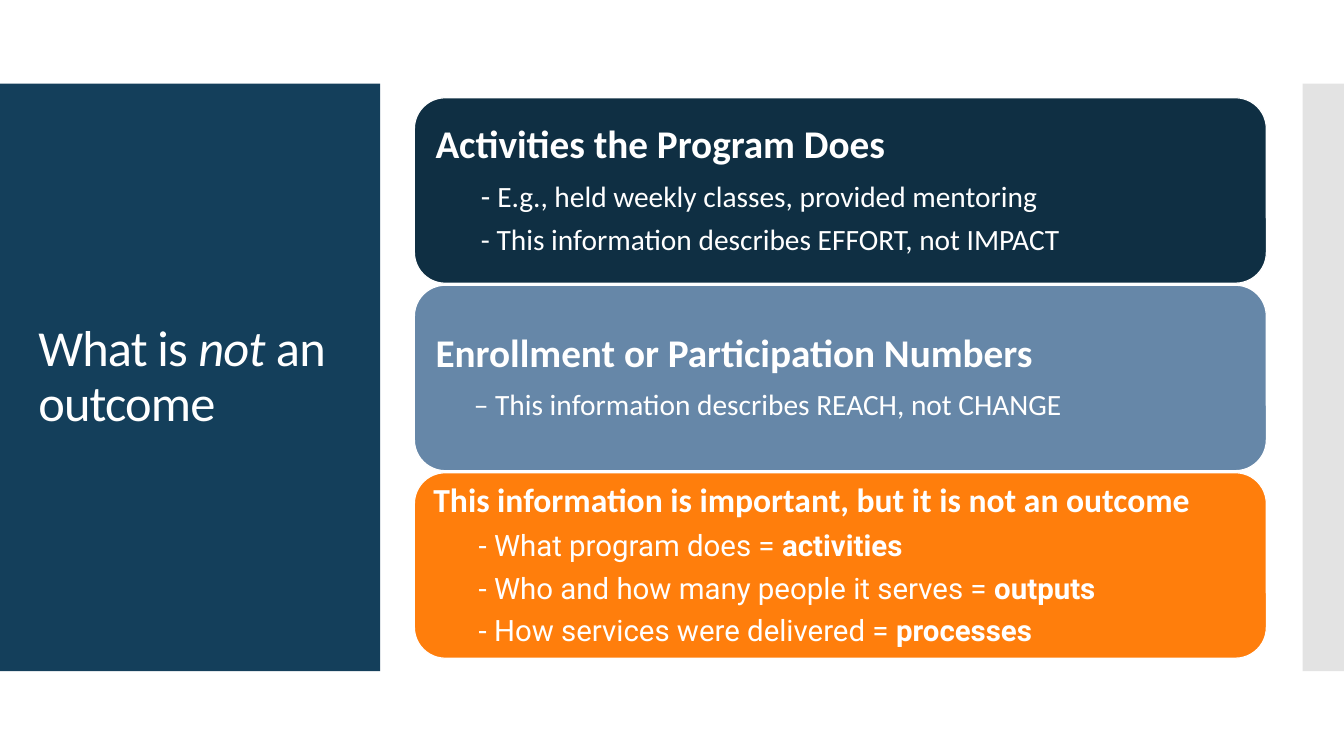
from dataclasses import dataclass

from lxml import etree
from pptx import Presentation
from pptx.dml.color import RGBColor
from pptx.enum.shapes import MSO_SHAPE
from pptx.enum.text import MSO_ANCHOR, MSO_AUTO_SIZE, PP_ALIGN
from pptx.oxml.ns import qn
from pptx.shapes.autoshape import Shape
from pptx.slide import Slide
from pptx.text.text import TextFrame, _Paragraph
from pptx.util import Inches, Pt

RECTANGLE = MSO_SHAPE.RECTANGLE
ROUNDED_RECTANGLE = MSO_SHAPE.ROUNDED_RECTANGLE
MIDDLE = MSO_ANCHOR.MIDDLE
NO_AUTOFIT = MSO_AUTO_SIZE.NONE
LEFT = PP_ALIGN.LEFT

COLORS = {
    "white": "FFFFFF",
    "panel": "143F5B",
    "strip": "C8C8C8",
    "navy": "0F2F43",
    "steel": "6687A8",
    "orange": "FF7E0C",
}
TITLE_ONLY_LAYOUT = 5
LINE_SPACING = 0.9
SPACE_AFTER_RATIO = 0.35
CARD_TOP = 0.97
CARD_PITCH = 1.86
BAND_TOP, BAND_HEIGHT = 0.83, 5.83


@dataclass(frozen=True)
class Span:
    text: str
    size: float = 21
    bold: bool = False


@dataclass(frozen=True)
class Card:
    color: str
    inset: float
    heading: Span
    details: tuple[tuple[Span, ...], ...]
    indent: float = 0.45
    detail_font: str = "Calibri"


CARDS = (
    Card(
        "navy",
        0.12,
        Span("Activities the Program Does", 28, True),
        (
            (Span("- ", 22), Span("E.g., held weekly classes, provided mentoring")),
            (Span("- This information describes EFFORT, not IMPACT"),),
        ),
    ),
    Card(
        "steel",
        0.12,
        Span("Enrollment or Participation Numbers", 28, True),
        ((Span("– This information describes REACH, not CHANGE"),),),
        indent=0.38,
    ),
    Card(
        "orange",
        0.1,
        Span("This information is important, but it is not an outcome", 24, True),
        (
            (Span("- What program does = "), Span("activities", bold=True)),
            (Span("- Who and how many people it serves = "), Span("outputs", bold=True)),
            (Span("- How services were delivered = "), Span("processes", bold=True)),
        ),
        detail_font="Roboto",
    ),
)


def add_text(
    paragraph: _Paragraph,
    text: str,
    *,
    size: float,
    font: str = "Calibri",
    bold: bool = False,
    italic: bool = False,
    spacing: int = 0,
) -> None:
    run = paragraph.add_run()
    run.text = text
    run.font.size = Pt(size)
    run.font.name = font
    run.font.bold = bold
    run.font.italic = italic
    run.font.color.rgb = RGBColor.from_string(COLORS["white"])
    if spacing:
        run.font._element.set("spc", str(spacing))


def add_block(
    slide: Slide, preset: MSO_SHAPE, color: str,
    left: float, top: float, width: float, height: float,
) -> Shape:
    shape = slide.shapes.add_shape(
        preset, Inches(left), Inches(top), Inches(width), Inches(height)
    )
    shape.shadow.inherit = False
    shape.fill.solid()
    shape.fill.fore_color.rgb = RGBColor.from_string(COLORS[color])
    shape.line.fill.background()
    return shape


def set_frame(frame: TextFrame, inset: float) -> None:
    frame.word_wrap = True
    frame.auto_size = NO_AUTOFIT
    frame.vertical_anchor = MIDDLE
    frame.margin_left = frame.margin_right = Inches(inset)
    frame.margin_top = frame.margin_bottom = Inches(inset)


def add_line(paragraph: _Paragraph, spans: tuple[Span, ...], font: str, indent: float) -> None:
    paragraph.alignment = LEFT
    paragraph.line_spacing = LINE_SPACING
    paragraph.space_after = Pt(SPACE_AFTER_RATIO * spans[0].size)
    paragraph._p.get_or_add_pPr().set("marL", str(Inches(indent)))
    for span in spans:
        add_text(paragraph, span.text, size=span.size, font=font, bold=span.bold)


def add_card(slide: Slide, card: Card, top: float) -> None:
    shape = add_block(slide, ROUNDED_RECTANGLE, card.color, 4.11, top, 8.45, 1.84)
    shape.line.color.rgb = RGBColor.from_string(COLORS["white"])
    shape.line.width = Pt(0.85)
    frame = shape.text_frame
    set_frame(frame, card.inset)
    add_line(frame.paragraphs[0], (card.heading,), "Calibri", 0)
    for detail in card.details:
        add_line(frame.add_paragraph(), detail, card.detail_font, card.indent)


def add_background(slide: Slide) -> None:
    add_block(slide, RECTANGLE, "panel", 0, BAND_TOP, 3.77, BAND_HEIGHT)
    strip = add_block(slide, RECTANGLE, "strip", 12.92, BAND_TOP, 0.41, BAND_HEIGHT)
    color = strip._element.spPr.find(qn("a:solidFill")).find(qn("a:srgbClr"))
    etree.SubElement(color, qn("a:alpha")).set("val", "50000")


def place_title(slide: Slide) -> None:
    title = slide.shapes.title
    slide.shapes._spTree.append(title._element)
    title.left, title.top = Inches(0.28), Inches(1.23)
    title.width, title.height = Inches(3.22), Inches(5.03)
    set_frame(title.text_frame, 0.1)
    paragraph = title.text_frame.paragraphs[0]
    paragraph.alignment = LEFT
    paragraph.line_spacing = LINE_SPACING
    for text, italic in (("What is ", False), ("not", True), (" an outcome", False)):
        add_text(paragraph, text, size=36, italic=italic, spacing=-60)


def main() -> None:
    presentation = Presentation()
    presentation.slide_width = Inches(13.33)
    presentation.slide_height = Inches(7.5)
    slide = presentation.slides.add_slide(presentation.slide_layouts[TITLE_ONLY_LAYOUT])
    add_background(slide)
    place_title(slide)
    for position, card in enumerate(CARDS):
        add_card(slide, card, CARD_TOP + position * CARD_PITCH)
    presentation.save("out.pptx")


if __name__ == "__main__":
    main()
